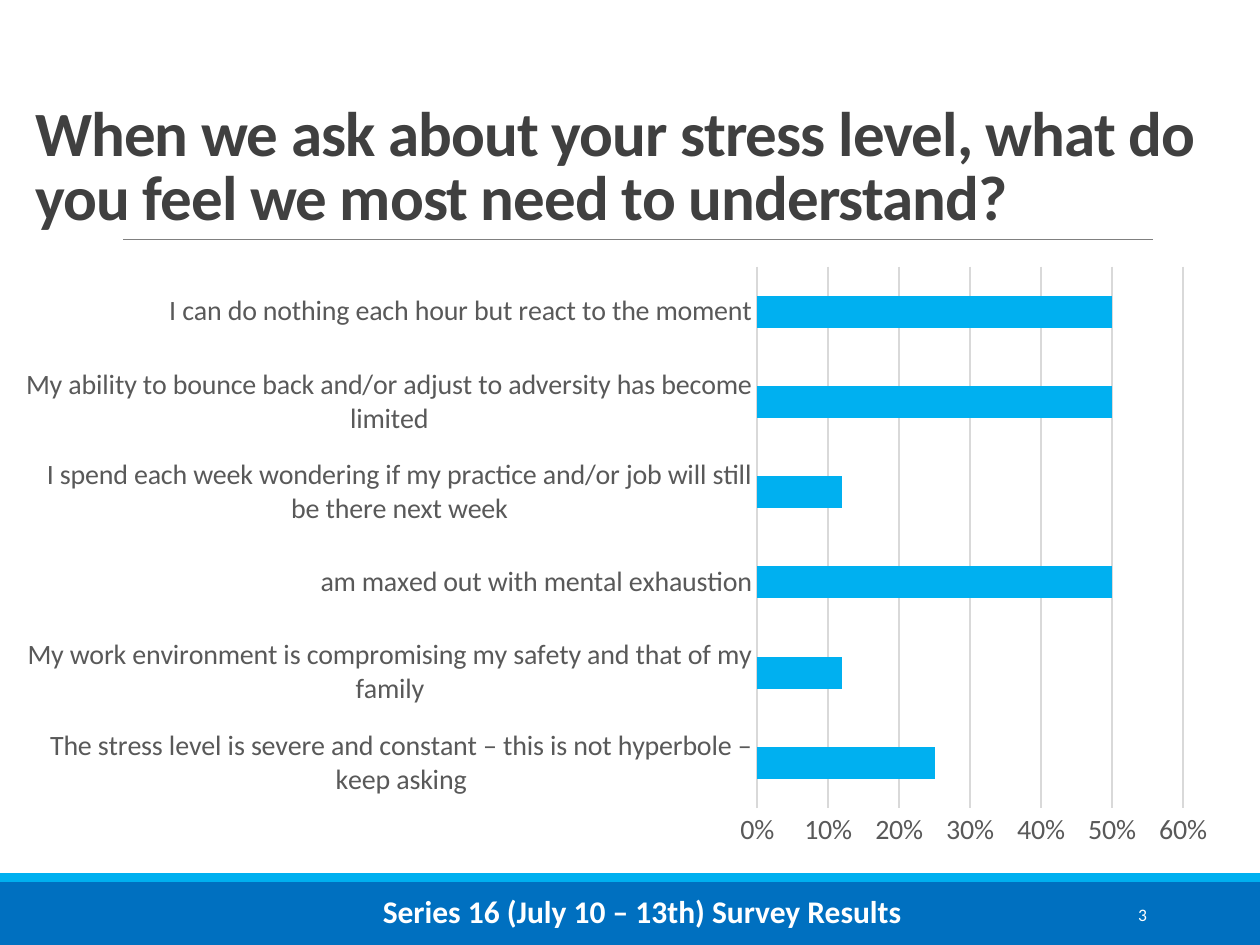
from pptx import Presentation
from pptx.chart.data import CategoryChartData
from pptx.dml.color import RGBColor
from pptx.enum.chart import XL_CHART_TYPE, XL_TICK_MARK
from pptx.enum.shapes import MSO_CONNECTOR, MSO_SHAPE
from pptx.enum.text import MSO_ANCHOR, PP_ALIGN
from pptx.util import Inches, Pt
from lxml import etree

BAR = XL_CHART_TYPE.BAR_CLUSTERED
NONE = XL_TICK_MARK.NONE
RECT = MSO_SHAPE.RECTANGLE
LINE = MSO_CONNECTOR.STRAIGHT
TOP, MIDDLE, BOTTOM = MSO_ANCHOR.TOP, MSO_ANCHOR.MIDDLE, MSO_ANCHOR.BOTTOM
LEFT, RIGHT = PP_ALIGN.LEFT, PP_ALIGN.RIGHT
A = "http://schemas.openxmlformats.org/drawingml/2006/main"

COLORS = {
    "blue": "0070C0", "sky": "00B0F0", "rule": "808080", "title": "404040",
    "label": "595959", "grid": "D9D9D9", "white": "FFFFFF",
}
ANSWERS = [
    ("The stress level is severe and constant – this is not hyperbole – keep asking", 0.25),
    ("My work environment is compromising my safety and that of my family", 0.12),
    ("am maxed out with mental exhaustion", 0.5),
    ("I spend each week wondering if my practice and/or job will still be there next week", 0.12),
    ("My ability to bounce back and/or adjust to adversity has become limited", 0.5),
    ("I can do nothing each hour but react to the moment", 0.5),
]


def apply(item, values):
    for name, value in values.items():
        setattr(item, name, value)


class Deck:
    """Holds the style and the current slide, and draws each kind of element."""

    def __init__(self, wide, high):
        self.file = Presentation()
        apply(self.file, {"slide_width": Inches(wide), "slide_height": Inches(high)})
        self.slide = self.file.slides.add_slide(self.file.slide_layouts[6])
        self.shapes = self.slide.shapes
        self.face = "Calibri"

    def color(self, name):
        return RGBColor.from_string(COLORS[name])

    def font(self, font, size, color, bold=False):
        apply(font, {"name": self.face, "size": Pt(size), "bold": bold})
        font.color.rgb = self.color(color)

    def stroke(self, line, color, width):
        line.color.rgb = self.color(color)
        line.width = Pt(width)

    def band(self, at, color):
        band = self.shapes.add_shape(RECT, *map(Inches, at))
        band.shadow.inherit = False
        band.fill.solid()
        band.fill.fore_color.rgb = self.color(color)
        band.line.fill.background()

    def rule(self, ends, color, width):
        rule = self.shapes.add_connector(LINE, *map(Inches, ends))
        self.stroke(rule.line, color, width)
        etree.SubElement(rule.element.spPr, f"{{{A}}}effectLst")

    def text(self, at, words, size, color, bold=False, anchor=TOP,
             align=LEFT, space=1.0, track=0, wrap=True):
        frame = self.shapes.add_textbox(*map(Inches, at)).text_frame
        apply(frame, {"word_wrap": wrap, "vertical_anchor": anchor})
        para = frame.paragraphs[0]
        apply(para, {"alignment": align, "line_spacing": space})
        run = para.add_run()
        run.text = words
        self.font(run.font, size, color, bold)
        if track:
            run.font._element.set("spc", str(track))

    def chart(self, at, rows, size, color):
        data = CategoryChartData(number_format="0%")
        data.categories = [name for name, _ in rows]
        data.add_series("Series 1", [value for _, value in rows])
        chart = self.shapes.add_chart(BAR, *map(Inches, at), data).chart
        apply(chart, {"has_legend": False, "has_title": False})
        self.font(chart.font, size, "label")
        plot = chart.plots[0]
        apply(plot, {"gap_width": 182, "vary_by_categories": False})
        fill = plot.series[0].format.fill
        fill.solid()
        fill.fore_color.rgb = self.color(color)
        cats, vals = chart.category_axis, chart.value_axis
        for axis in (cats, vals):
            apply(axis, {"major_tick_mark": NONE, "minor_tick_mark": NONE})
            self.font(axis.tick_labels.font, size, "label")
        apply(vals, {"minimum_scale": 0, "maximum_scale": 0.6, "major_unit": 0.1})
        apply(vals.tick_labels, {"number_format": "0%", "number_format_is_linked": False})
        vals.format.line.fill.background()
        for line in (cats.format.line, vals.major_gridlines.format.line):
            self.stroke(line, "grid", 0.75)


def main():
    deck = Deck(10, 7.5)
    deck.band((0, 7, 10, 0.5), "blue")
    deck.band((0, 6.93, 10, 0.07), "sky")
    deck.rule((0.98, 1.9, 9.15, 1.9), "rule", 0.5)
    deck.text((0.18, 0.31, 9.59, 1.59),
              "When we ask about your stress level, what do you feel we most need to understand?",
              36, "title", bold=True, anchor=BOTTOM, space=0.85, track=-50)
    deck.text((8.12, 7.06, 1.08, 0.4), "3", 10, "white", anchor=MIDDLE, align=RIGHT)
    deck.chart((0.18, 2.02, 9.59, 4.8), ANSWERS, 16, "sky")
    deck.text((2.94, 7.03, 4.36, 0.4), "Series 16 (July 10 – 13th) Survey Results",
              18, "white", bold=True, wrap=False)
    deck.file.save("out.pptx")


if __name__ == "__main__":
    main()
